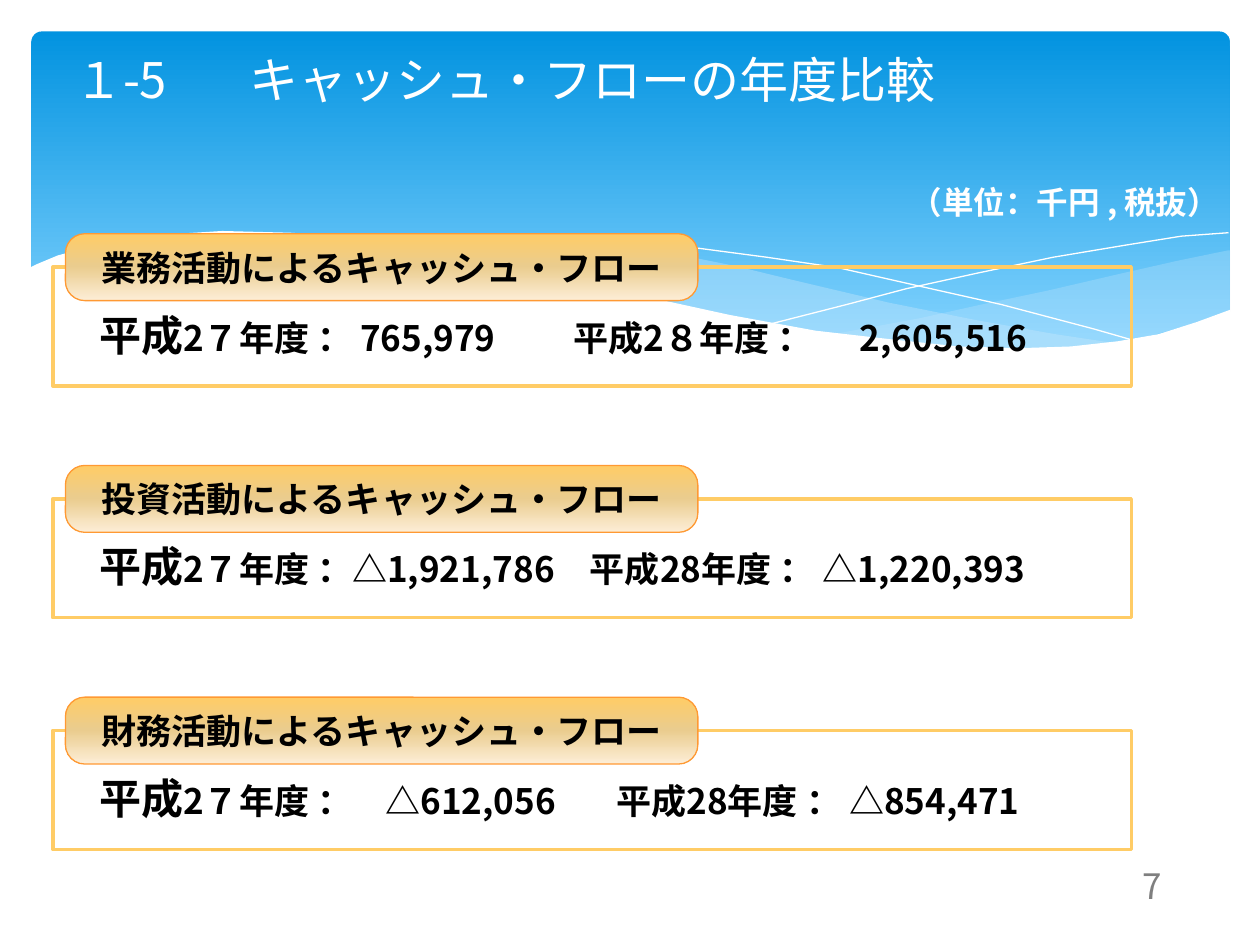
"""Build the slide that compares cash flow by fiscal year."""
from typing import NamedTuple

from lxml import etree
from pptx import Presentation
from pptx.dml.color import RGBColor
from pptx.enum.shapes import MSO_SHAPE
from pptx.enum.text import MSO_ANCHOR, PP_ALIGN
from pptx.oxml.ns import qn
from pptx.util import Pt

RECT, ROUND = MSO_SHAPE.RECTANGLE, MSO_SHAPE.ROUNDED_RECTANGLE
TOP, MIDDLE = MSO_ANCHOR.TOP, MSO_ANCHOR.MIDDLE
LEFT, CENTER = PP_ALIGN.LEFT, PP_ALIGN.CENTER
FONT = "Noto Sans CJK JP"
WHITE = RGBColor(0xFF, 0xFF, 0xFF)
BLACK = RGBColor(0x00, 0x00, 0x00)
GRAY = RGBColor(0x7F, 0x7F, 0x7F)
PALE = RGBColor(0xC6, 0xE7, 0xFC)
BLUE = RGBColor(0x02, 0x93, 0xE0)
SKY = RGBColor(0x81, 0xD2, 0xFE)
AMBER = RGBColor(0xFF, 0xCC, 0x66)
SAND = RGBColor(0xEA, 0xCC, 0x8E)
CREAM = RGBColor(0xFD, 0xEE, 0xD7)
ORANGE = RGBColor(0xFF, 0x99, 0x33)


class Box(NamedTuple):
    left: float
    top: float
    width: float
    height: float


class Run(NamedTuple):
    text: str
    size: float
    color: RGBColor = BLACK
    bold: bool = True


class Wave(NamedTuple):
    points: list
    fill: RGBColor | None = None
    alpha: int = 100


class Flow(NamedTuple):
    name: str
    values: str
    tabs: tuple = ()


WAVES = [
    Wave([(702, 143.3), (673, 149), (641.5, 155.5), (599, 165.6), (561, 174.2),
          (525, 182.2), (476, 190.8), (497.5, 193.7), (527, 197.3), (553.7, 199.4),
          (578.2, 200.2), (607.7, 199.4), (634.3, 196.6), (657.4, 192.2),
          (678.2, 186.5), (702.7, 177.8), (702.7, 143.3)], PALE, 29),
    Wave([(643, 196.6), (602.6, 190.8), (558, 182.9), (508.3, 172.8), (452.9, 159.8),
          (420.5, 151.9), (389.5, 146.2), (360.7, 141.1), (318.2, 136.1),
          (273.6, 133.9), (236.2, 134.6), (205.9, 137.5), (246.2, 143.3),
          (290.9, 151.9), (353.5, 167), (407.5, 178.6), (456.5, 187.9),
          (500.4, 194.4), (538.6, 198.7), (573.1, 200.2), (610.6, 199.4)], PALE, 40),
    Wave([(222.5, 140.4), (247.7, 136.8), (288.7, 134.6), (324, 135.4), (367.2, 138.2),
          (400.3, 141.8), (437.8, 146.9), (478.8, 153.4), (523.4, 162.7),
          (572.4, 173.5), (625, 187.9), (653, 195.8)]),
    Wave([(441.4, 185), (483.8, 173.5), (518.4, 164.9), (558.7, 155.5),
          (601.9, 146.9), (644.4, 139.7), (675.4, 135.4), (702, 133.2)]),
    Wave([(703.4, 177.1), (684, 184.3), (662.4, 190.8), (638.6, 195.1), (612, 198),
          (582.5, 199.4), (547.9, 198), (509.8, 194.4), (465.8, 188.6), (416.9, 180),
          (362.2, 167.8), (301, 153.4), (262.8, 145.4), (226.8, 139.7),
          (195.1, 135.4), (165.6, 133.2), (127.4, 132.5), (95, 133.9), (68.4, 137.5),
          (48.2, 141.8), (33.1, 146.2), (20.9, 151.2), (16.6, 153.4), (16.6, 236.9),
          (703.4, 236.9)], WHITE),
]
FLOWS = [
    Flow("業務活動によるキャッシュ・フロー",
         "2７年度 ： 765,979\t平成2８年度 ：\t2,605,516", (271, 434.5)),
    Flow("投資活動によるキャッシュ・フロー",
         "2７年度 ：△1,921,786\u3000平成28年度 ： △1,220,393".replace("\u3000", "　")),
    Flow("財務活動によるキャッシュ・フロー",
         "2７年度 ：\t△612,056\t平成28年度 ： △854,471", (163.5, 295.5)),
]
FIRST, STEP = 152.6, 132.4


def write(shape, runs: list[Run], align=LEFT, anchor=MIDDLE, space=0, tabs=()) -> None:
    """Fill a shape with one paragraph of runs."""
    frame = shape.text_frame
    frame.word_wrap = True
    frame.vertical_anchor = anchor
    para = frame.paragraphs[0]
    para.alignment = align
    para.space_before = Pt(space)
    if tabs:
        stops = etree.SubElement(para._p.get_or_add_pPr(), qn("a:tabLst"))
        for tab in tabs:
            etree.SubElement(stops, qn("a:tab"), pos=str(Pt(tab)), algn="l")
    for item in runs:
        run = para.add_run()
        run.text = item.text
        font = run.font
        font.name, font.size, font.bold = FONT, Pt(item.size), item.bold
        font.color.rgb = item.color
        etree.SubElement(run._r.get_or_add_rPr(), qn("a:ea"), typeface=FONT)


def label(slide, box: Box, runs: list[Run], **style) -> None:
    """Add a text box."""
    write(slide.shapes.add_textbox(*map(Pt, box)), runs, **style)


def blend(shape, stops: list[tuple[int, RGBColor]]) -> None:
    """Give a shape a gradient from top to bottom."""
    shape.fill.gradient()
    shape.fill.gradient_angle = 270
    items = shape._element.spPr.find(".//" + qn("a:gsLst"))
    items.clear()
    for place, color in stops:
        stop = etree.SubElement(items, qn("a:gs"), pos=str(place * 1000))
        etree.SubElement(stop, qn("a:srgbClr"), val=str(color))


def panel(slide, kind, box: Box, line: RGBColor | None = None, width=0, bend=None):
    """Add an unfilled shape with an optional outline."""
    shape = slide.shapes.add_shape(kind, *map(Pt, box))
    shape.shadow.inherit = False
    shape.fill.background()
    if line is None:
        shape.line.fill.background()
    else:
        shape.line.color.rgb = line
        shape.line.width = Pt(width)
    if bend is not None:
        shape.adjustments[0] = bend
    return shape


def curve(slide, wave: Wave) -> None:
    """Draw a filled wave or an open white line."""
    pen = slide.shapes.build_freeform(*wave.points[0], scale=Pt(1))
    pen.add_line_segments(wave.points[1:], close=wave.fill is not None)
    shape = pen.convert_to_shape()
    shape.shadow.inherit = False
    if wave.fill is None:
        shape.fill.background()
        shape.line.color.rgb = WHITE
        shape.line.width = Pt(0)
        return
    shape.fill.solid()
    shape.fill.fore_color.rgb = wave.fill
    shape.line.fill.background()
    if wave.alpha < 100:
        color = shape._element.spPr.find(".//" + qn("a:srgbClr"))
        etree.SubElement(color, qn("a:alpha"), val=str(wave.alpha * 1000))


def block(slide, flow: Flow, top: float) -> None:
    """Draw one cash flow with its values, frame and heading."""
    label(slide, Box(49.7, top + 16.4, 671.8, 43.9),
          [Run("平成", 24), Run(flow.values, 20)], space=12, tabs=flow.tabs)
    panel(slide, RECT, Box(30.2, top, 616.3, 68), AMBER, 2)
    head = panel(slide, ROUND, Box(37.4, top - 19, 361.4, 38.2), ORANGE, 0.75, 0.29)
    blend(head, [(0, AMBER), (49, SAND), (100, CREAM)])
    write(head, [Run(flow.name, 20)], align=CENTER)


def main() -> None:
    """Build and save the slide."""
    deck = Presentation()
    deck.slide_width, deck.slide_height = Pt(720), Pt(540)
    slide = deck.slides.add_slide(deck.slide_layouts[6])
    sky = panel(slide, ROUND, Box(18, 18, 684.7, 194.4), bend=0.03)
    blend(sky, [(0, BLUE), (90, SKY), (100, SKY)])
    for wave in WAVES:
        curve(slide, wave)
    for row, flow in enumerate(FLOWS):
        block(slide, flow, FIRST + row * STEP)
    label(slide, Box(35.3, 22.3, 549.4, 46.1),
          [Run("１-5\tキャッシュ・フローの年度比較", 28, WHITE, False)], tabs=(100.5,))
    label(slide, Box(513.4, 100.8, 205.2, 28.8),
          [Run("（単位：千円 , 税抜）", 18, WHITE)], anchor=TOP)
    label(slide, Box(612.7, 490.3, 91.4, 28.8),
          [Run("7", 20, GRAY, False)], align=CENTER, anchor=TOP)
    deck.save("out.pptx")


if __name__ == "__main__":
    main()
